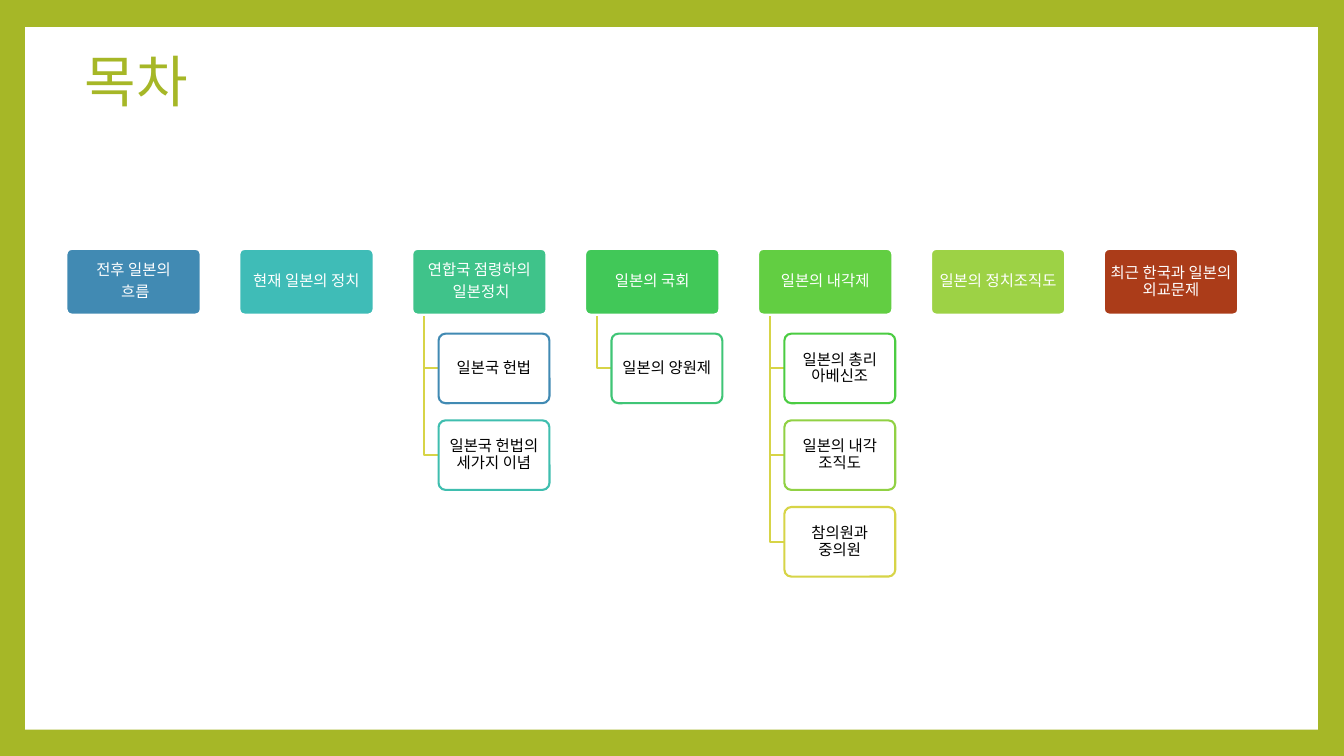
import pptx
import pptx.dml.color
import pptx.enum.shapes
import pptx.enum.text
import pptx.oxml.ns
import pptx.util
from lxml import etree

Inches = pptx.util.Inches
Pt = pptx.util.Pt
RGBColor = pptx.dml.color.RGBColor
Shape = pptx.enum.shapes.MSO_SHAPE
Align = pptx.enum.text.PP_ALIGN
Anchor = pptx.enum.text.MSO_ANCHOR

FONT = "Calibri"
LIME = RGBColor(0xA6, 0xB7, 0x27)
WHITE = RGBColor(0xFF, 0xFF, 0xFF)
BLACK = RGBColor(0x00, 0x00, 0x00)
BLUE = RGBColor(0x41, 0x8A, 0xB3)
CYAN = RGBColor(0x3F, 0xBC, 0xB7)
TEAL = RGBColor(0x3F, 0xBE, 0xAF)
JADE = RGBColor(0x3F, 0xC3, 0x8A)
MINT = RGBColor(0x3F, 0xC5, 0x76)
GREEN = RGBColor(0x41, 0xC8, 0x58)
GRASS = RGBColor(0x4B, 0xCC, 0x42)
LEAF = RGBColor(0x62, 0xCE, 0x42)
OLIVE = RGBColor(0x91, 0xD1, 0x44)
PEAR = RGBColor(0x9D, 0xD2, 0x45)
GOLD = RGBColor(0xD7, 0xD4, 0x47)
RUST = RGBColor(0xAB, 0x3C, 0x19)

# Each topic: paragraphs, fill, and its subtopics with their line colours
TOPICS = [
    (["전후 일본의", " 흐름"], BLUE, []),
    (["현재 일본의 정치"], CYAN, []),
    (["연합국 점령하의", " 일본정치"], JADE,
     [("일본국 헌법", BLUE), ("일본국 헌법의 세가지 이념", TEAL)]),
    (["일본의 국회"], GREEN, [("일본의 양원제", MINT)]),
    (["일본의 내각제"], LEAF,
     [("일본의 총리 아베신조", GRASS), ("일본의 내각 조직도", OLIVE),
      ("참의원과 중의원", GOLD)]),
    (["일본의 정치조직도"], PEAR, []),
    (["최근 한국과 일본의 외교문제"], RUST, []),
]

HEAD = Inches(1.37)
SUB = Inches(1.1)
HIGH = Inches(0.69)
STEP = Inches(0.86)
STEM = Inches(0.14)


def add_run(para, text, size, color):
    run = para.add_run()
    run.text = text
    run.font.name = FONT
    run.font.size = Pt(size)
    run.font.color.rgb = color


def add_box(slide, box, lines, fill, edge, width, ink):
    shape = slide.shapes.add_shape(Shape.ROUNDED_RECTANGLE, *box)
    shape.adjustments[0] = 0.1
    shape.shadow.inherit = False
    shape.fill.solid()
    shape.fill.fore_color.rgb = fill
    shape.line.color.rgb = edge
    shape.line.width = Pt(width)
    frame = shape.text_frame
    frame.word_wrap = True
    frame.vertical_anchor = Anchor.MIDDLE
    frame.margin_left = frame.margin_right = Inches(0.03)
    frame.margin_top = frame.margin_bottom = Inches(0.03)
    for i, line in enumerate(lines):
        para = frame.add_paragraph() if i else frame.paragraphs[0]
        para.alignment = Align.CENTER
        para.line_spacing = 0.9
        para.space_after = Pt(3.85)
        add_run(para, line, 11, ink)
    return shape


def set_alpha(shape, share):
    color = shape.fill._xPr.find(".//" + pptx.oxml.ns.qn("a:srgbClr"))
    alpha = etree.SubElement(color, pptx.oxml.ns.qn("a:alpha"))
    alpha.set("val", str(share * 1000))


def add_elbow(slide, left, top, end):
    """Draw a line down from (left, top) to end, then right by one stem."""
    path = slide.shapes.build_freeform(left, top)
    path.add_line_segments([(left, end), (left + STEM, end)], close=False)
    elbow = path.convert_to_shape()
    elbow.shadow.inherit = False
    elbow.fill.background()
    elbow.line.color.rgb = GOLD
    elbow.line.width = Pt(1.5)


def add_topic(slide, left, top, topic):
    lines, fill, subs = topic
    add_box(slide, (left, top, HEAD, HIGH), lines, fill, WHITE, 4.25, WHITE)
    for i, (text, edge) in enumerate(subs, 1):
        y = top + i * STEP
        add_elbow(slide, left + STEM, top + HIGH, y + HIGH // 2)
        box = (left + 2 * STEM, y, SUB, HIGH)
        shape = add_box(slide, box, [text], WHITE, edge, 1.5, BLACK)
        set_alpha(shape, 90)


def add_chart(slide, left, top, width):
    """Spread the topics evenly, with the last one ending at the right edge."""
    pitch = (width - HEAD) // (len(TOPICS) - 1)
    for i, topic in enumerate(TOPICS):
        add_topic(slide, left + i * pitch, top, topic)


def add_title(slide, left, top, width, height):
    title = slide.shapes.title
    title.left, title.top = left, top
    title.width, title.height = width, height
    frame = title.text_frame
    frame.auto_size = pptx.enum.text.MSO_AUTO_SIZE.NONE
    frame.word_wrap = True
    frame.vertical_anchor = Anchor.MIDDLE
    para = frame.paragraphs[0]
    para.alignment = Align.LEFT
    para.line_spacing = 0.9
    add_run(para, "목차", 40, LIME)


def add_panel(slide, left, top, width, height):
    """Frame the slide in lime, with a white panel behind the title."""
    slide.background.fill.solid()
    slide.background.fill.fore_color.rgb = LIME
    panel = slide.shapes.add_shape(Shape.RECTANGLE, left, top, width, height)
    panel.shadow.inherit = False
    panel.fill.solid()
    panel.fill.fore_color.rgb = WHITE
    panel.line.fill.background()
    slide.shapes.title.element.addprevious(panel.element)


def main():
    deck = pptx.Presentation()
    deck.slide_width = Inches(13.33)
    deck.slide_height = Inches(7.5)
    slide = deck.slides.add_slide(deck.slide_layouts[5])
    add_panel(slide, Inches(0.25), Inches(0.27), Inches(12.82), Inches(6.97))
    add_title(slide, Inches(0.74), Inches(0.35), Inches(1.53), Inches(0.97))
    add_chart(slide, Inches(0.64), Inches(2.45), Inches(11.66))
    deck.save("out.pptx")


if __name__ == "__main__":
    main()
